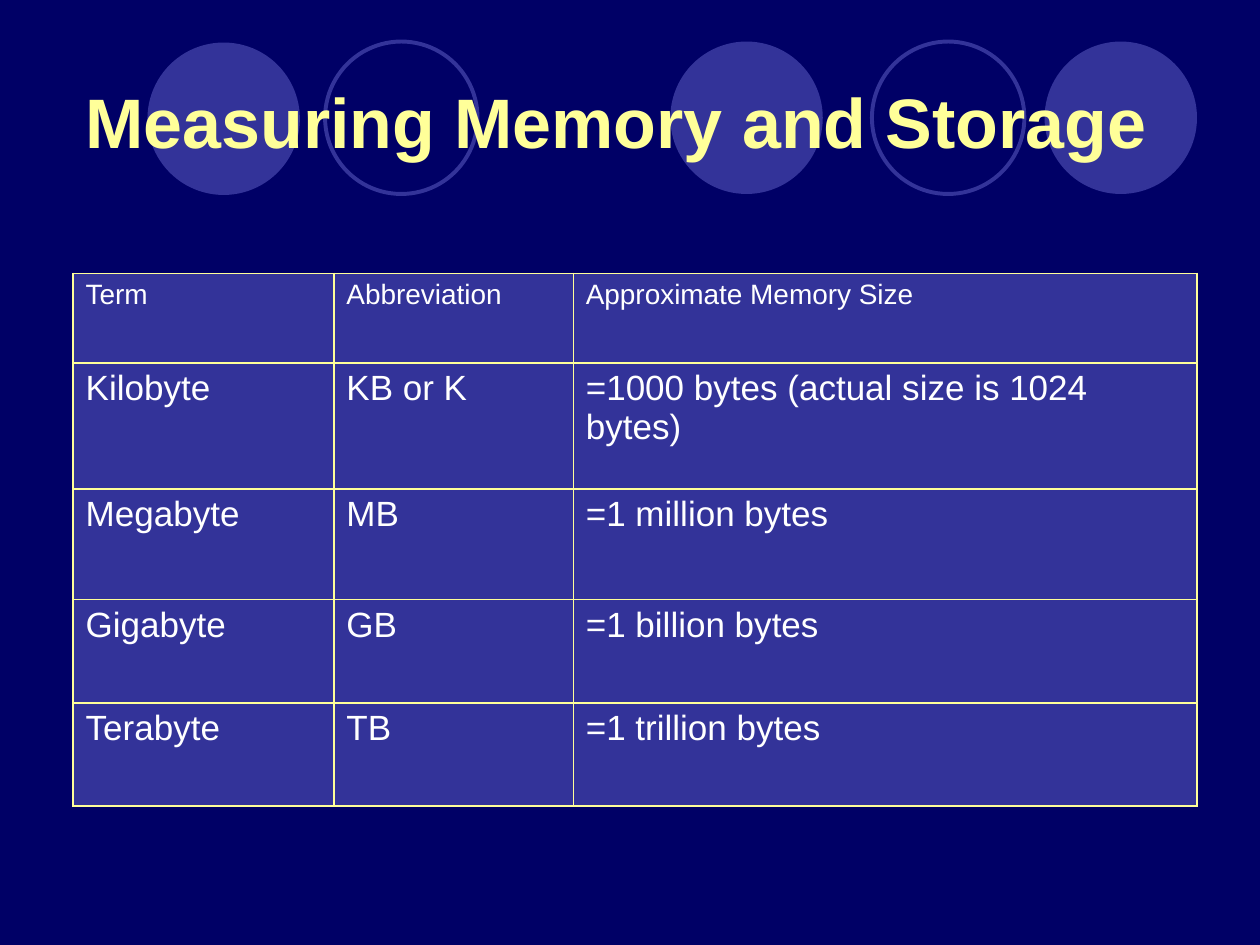
import dataclasses

import lxml.etree
import pptx
import pptx.dml.color
import pptx.enum.shapes
import pptx.enum.text
import pptx.oxml.ns
import pptx.util

COLORS = {
    "background": "000066",
    "panel": "333399",
    "accent": "FFFF99",
    "text": "FFFFFF",
}
FONT = "Arial"
SLIDE_WIDTH = pptx.util.Inches(10)
SLIDE_HEIGHT = pptx.util.Inches(7.5)


@dataclasses.dataclass(frozen=True)
class Circle:
    left: float
    top: float
    filled: bool


CIRCLE_SIZE = 12.1
CIRCLES = [
    Circle(53.2, 4.4, True),
    Circle(82.9, 4.4, True),
    Circle(11.7, 4.5, True),
    Circle(69.2, 4.4, False),
    Circle(25.8, 4.4, False),
]

COLUMN_SHARES = [20.7, 19, 49.5]
ROW_SHARES = [9.47, 13.33, 11.73, 10.93, 10.93]
MEMORY_ROWS = [
    ("Term", "Abbreviation", "Approximate Memory Size"),
    ("Kilobyte", "KB or K", "=1000 bytes (actual size is 1024 bytes)"),
    ("Megabyte", "MB", "=1 million bytes"),
    ("Gigabyte", "GB", "=1 billion bytes"),
    ("Terabyte", "TB", "=1 trillion bytes"),
]


def across(percent: float) -> int:
    return round(SLIDE_WIDTH * percent / 100)


def down(percent: float) -> int:
    return round(SLIDE_HEIGHT * percent / 100)


def rgb(name: str) -> pptx.dml.color.RGBColor:
    return pptx.dml.color.RGBColor.from_string(COLORS[name])


def write_text(frame, text: str, *, size: float, color: str, bold: bool = False) -> None:
    para = frame.paragraphs[0]
    para.alignment = pptx.enum.text.PP_ALIGN.LEFT
    span = para.add_run()
    span.text = text
    span.font.name = FONT
    span.font.size = pptx.util.Pt(size)
    span.font.bold = bold
    span.font.color.rgb = rgb(color)


def draw_circle(page, circle: Circle) -> None:
    shape = page.shapes.add_shape(
        pptx.enum.shapes.MSO_SHAPE.OVAL,
        across(circle.left),
        down(circle.top),
        across(CIRCLE_SIZE),
        across(CIRCLE_SIZE),
    )
    shape.shadow.inherit = False
    if circle.filled:
        shape.fill.solid()
        shape.fill.fore_color.rgb = rgb("panel")
        shape.line.fill.background()
    else:
        shape.fill.background()
        shape.line.color.rgb = rgb("panel")
        shape.line.width = pptx.util.Pt(2.25)


def draw_title(page, text: str) -> None:
    box = page.shapes.add_textbox(across(5.8), down(8.93), across(87.5), down(7.73))
    box.text_frame.word_wrap = True
    box.text_frame.vertical_anchor = pptx.enum.text.MSO_ANCHOR.MIDDLE
    write_text(box.text_frame, text, size=40, color="accent", bold=True)


def add_borders(cell, color: str, width: float) -> None:
    properties = cell._tc.get_or_add_tcPr()
    for position, side in enumerate(("lnL", "lnR", "lnT", "lnB")):
        border = lxml.etree.Element(
            pptx.oxml.ns.qn(f"a:{side}"), w=str(pptx.util.Pt(width))
        )
        fill = lxml.etree.SubElement(border, pptx.oxml.ns.qn("a:solidFill"))
        lxml.etree.SubElement(fill, pptx.oxml.ns.qn("a:srgbClr"), val=COLORS[color])
        properties.insert(position, border)


def draw_table(page) -> None:
    table = page.shapes.add_table(
        len(ROW_SHARES),
        len(COLUMN_SHARES),
        across(5.8),
        down(28.93),
        across(sum(COLUMN_SHARES)),
        down(sum(ROW_SHARES)),
    ).table
    table.horz_banding = False
    for column, share in zip(table.columns, COLUMN_SHARES):
        column.width = across(share)
    for row, share in zip(table.rows, ROW_SHARES):
        row.height = down(share)
    for row_number, texts in enumerate(MEMORY_ROWS):
        size = 16 if row_number == 0 else 20
        for column_number, text in enumerate(texts):
            cell = table.cell(row_number, column_number)
            cell.fill.solid()
            cell.fill.fore_color.rgb = rgb("panel")
            add_borders(cell, "accent", 1)
            write_text(cell.text_frame, text, size=size, color="text")


def main() -> None:
    deck = pptx.Presentation()
    deck.slide_width = SLIDE_WIDTH
    deck.slide_height = SLIDE_HEIGHT
    page = deck.slides.add_slide(deck.slide_layouts[6])
    page.background.fill.solid()
    page.background.fill.fore_color.rgb = rgb("background")
    for circle in CIRCLES:
        draw_circle(page, circle)
    draw_title(page, "Measuring Memory and Storage")
    draw_table(page)
    deck.save("out.pptx")


if __name__ == "__main__":
    main()
